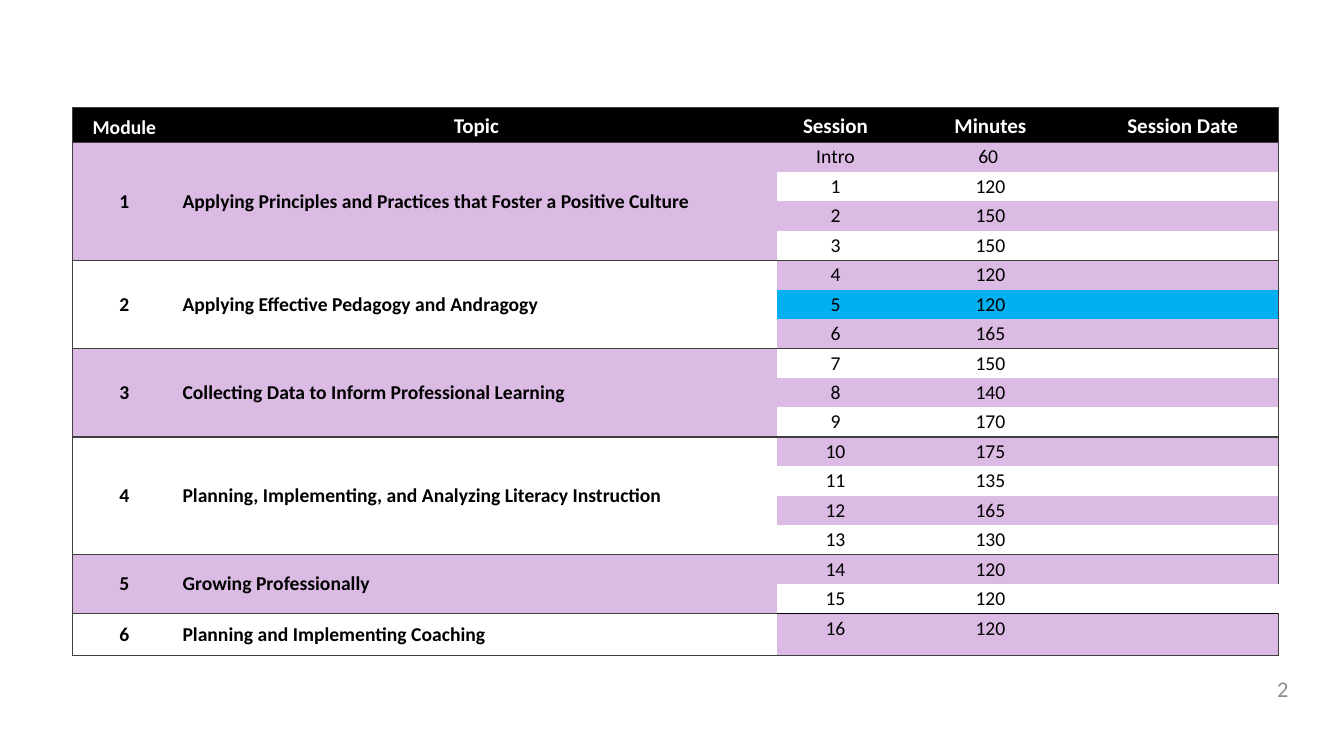
from dataclasses import dataclass

from lxml import etree
from pptx import Presentation
from pptx.dml.color import RGBColor
from pptx.enum.text import MSO_ANCHOR, PP_ALIGN
from pptx.oxml.ns import qn
from pptx.util import Cm, Pt

LEFT, CENTER, RIGHT = PP_ALIGN.LEFT, PP_ALIGN.CENTER, PP_ALIGN.RIGHT
TOP, MIDDLE, BOTTOM = MSO_ANCHOR.TOP, MSO_ANCHOR.MIDDLE, MSO_ANCHOR.BOTTOM


@dataclass(frozen=True)
class Theme:
    font: str = "Calibri"
    body_size: int = 14
    header_size: int = 15
    number_size: int = 16
    black: str = "000000"
    white: str = "FFFFFF"
    band: str = "DBBBE3"
    highlight: str = "00B0F0"
    border: str = "3F3F3F"
    number: str = "8C8C8C"


THEME = Theme()

HEADERS = ["Module", "Topic", "Session", "Minutes", "Session Date"]
# Each module: topic and its (session, minutes) pairs
MODULES = [
    ("Applying Principles and Practices that Foster a Positive Culture",
     [("Intro", "60 "), ("1", "120"), ("2", "150"), ("3", "150")]),
    ("Applying Effective Pedagogy and Andragogy",
     [("4", "120"), ("5", "120"), ("6", "165")]),
    ("Collecting Data to Inform Professional Learning",
     [("7", "150"), ("8", "140"), ("9", "170")]),
    ("Planning, Implementing, and Analyzing Literacy Instruction",
     [("10", "175"), ("11", "135"), ("12", "165"), ("13", "130")]),
    ("Growing Professionally", [("14", "120"), ("15", "120")]),
    ("Planning and Implementing Coaching", [("16", "120")]),
]
HIGHLIGHTED_SESSION = "5"
OPEN_EDGE_SESSION = "15"  # this row has no right border

COLUMN_WIDTHS = [2.61, 15.13, 2.97, 4.84, 4.85]
HEADER_HEIGHT, ROW_HEIGHT, LAST_HEIGHT = 0.89, 0.74, 1.05
SIDE_INSET, ROW_INSET = 0.16, 0.07
LAST_COLUMN = len(HEADERS) - 1


def format_text(paragraph, size, color, bold=False, align=CENTER):
    paragraph.alignment = align
    for run in paragraph.runs:
        run.font.name = THEME.font
        run.font.size = Pt(size)
        run.font.bold = bold
        run.font.color.rgb = RGBColor.from_string(color)


def set_borders(cell, left=None, right=None, top=None, bottom=None):
    """Draw a 1 pt line on each side that has a colour, none elsewhere."""
    properties = cell._tc.get_or_add_tcPr()
    sides = {"a:lnL": left, "a:lnR": right, "a:lnT": top, "a:lnB": bottom}
    for tag, color in sides.items():
        line = etree.SubElement(properties, qn(tag), w=str(Pt(1)))
        if color:
            fill = etree.SubElement(line, qn("a:solidFill"))
            etree.SubElement(fill, qn("a:srgbClr"), val=color)
        else:
            etree.SubElement(line, qn("a:noFill"))


def fill_cell(cell, text, fill, borders, size=THEME.body_size,
              color=THEME.black, bold=False, align=CENTER, anchor=TOP):
    set_borders(cell, **borders)
    cell.fill.solid()
    cell.fill.fore_color.rgb = RGBColor.from_string(fill)
    cell.margin_left = cell.margin_right = Cm(SIDE_INSET)
    cell.margin_top = cell.margin_bottom = Cm(ROW_INSET)
    cell.vertical_anchor = anchor
    paragraph = cell.text_frame.paragraphs[0]
    if text:
        paragraph.text = text
        format_text(paragraph, size, color, bold, align)
    else:  # an empty cell keeps the body size, so its row stays low
        paragraph._p.get_or_add_endParaRPr().set("sz", str(size * 100))


def add_header(table):
    for column, title in enumerate(HEADERS):
        borders = {
            "left": THEME.border if column == 0 else None,
            "right": THEME.border if column == LAST_COLUMN else None,
            "top": THEME.border, "bottom": THEME.border,
        }
        size = THEME.body_size if column == 0 else THEME.header_size
        fill_cell(table.cell(0, column), title, THEME.black, borders,
                  size, THEME.white, True, CENTER, BOTTOM)


def add_module(table, first_row, number, topic, sessions):
    last_row = first_row + len(sessions) - 1
    module_fill = THEME.band if number % 2 else THEME.white
    final = number == len(MODULES)

    for row, (session, minutes) in enumerate(sessions, first_row):
        first, last = row == first_row, row == last_row
        # Module and topic, written in the top cell of the span
        for column, text in enumerate([str(number), topic]):
            borders = {
                "left": THEME.border if column == 0 else None,
                "top": THEME.border if first else None,
                "bottom": THEME.border if first or last else None,
            }
            fill_cell(table.cell(row, column), text if first else "",
                      module_fill, borders, bold=True,
                      align=LEFT if column else CENTER, anchor=MIDDLE)

        # Session, minutes and date, banded row by row
        band = THEME.band if row % 2 else THEME.white
        fill = THEME.highlight if session == HIGHLIGHTED_SESSION else band
        top = THEME.black if final else THEME.border
        bottom = THEME.black if number == len(MODULES) - 1 else THEME.border
        for column, text in enumerate([session, minutes, ""], 2):
            closed = column == LAST_COLUMN and session != OPEN_EDGE_SESSION
            borders = {
                "right": THEME.border if closed else None,
                "top": top if first else None,
                "bottom": bottom if last else None,
            }
            fill_cell(table.cell(row, column), text, fill, borders)

    if last_row > first_row:
        for column in range(2):
            table.cell(first_row, column).merge(table.cell(last_row, column))
    return last_row + 1


def add_schedule(slide, left, top):
    session_count = sum(len(sessions) for _, sessions in MODULES)
    heights = ([HEADER_HEIGHT] + [ROW_HEIGHT] * (session_count - 1)
               + [LAST_HEIGHT])
    table = slide.shapes.add_table(
        len(heights), len(HEADERS), Cm(left), Cm(top),
        Cm(sum(COLUMN_WIDTHS)), Cm(sum(heights))).table
    table.horz_banding = False
    for column, width in zip(table.columns, COLUMN_WIDTHS):
        column.width = Cm(width)
    for row, height in zip(table.rows, heights):
        row.height = Cm(height)

    add_header(table)
    next_row = 1
    for number, (topic, sessions) in enumerate(MODULES, 1):
        next_row = add_module(table, next_row, number, topic, sessions)


def add_slide_number(slide, left, top, width, height):
    text_frame = slide.shapes.add_textbox(
        Cm(left), Cm(top), Cm(width), Cm(height)).text_frame
    text_frame.word_wrap = True
    text_frame.vertical_anchor = MIDDLE
    text_frame.text = "2"
    format_text(text_frame.paragraphs[0], THEME.number_size, THEME.number,
                align=RIGHT)


def main():
    presentation = Presentation()
    presentation.slide_width = Cm(33.87)
    presentation.slide_height = Cm(19.05)
    slide = presentation.slides.add_slide(presentation.slide_layouts[6])
    add_schedule(slide, 1.83, 2.7)
    add_slide_number(slide, 26.8, 16.97, 5.92, 0.76)
    presentation.save("out.pptx")


if __name__ == "__main__":
    main()
